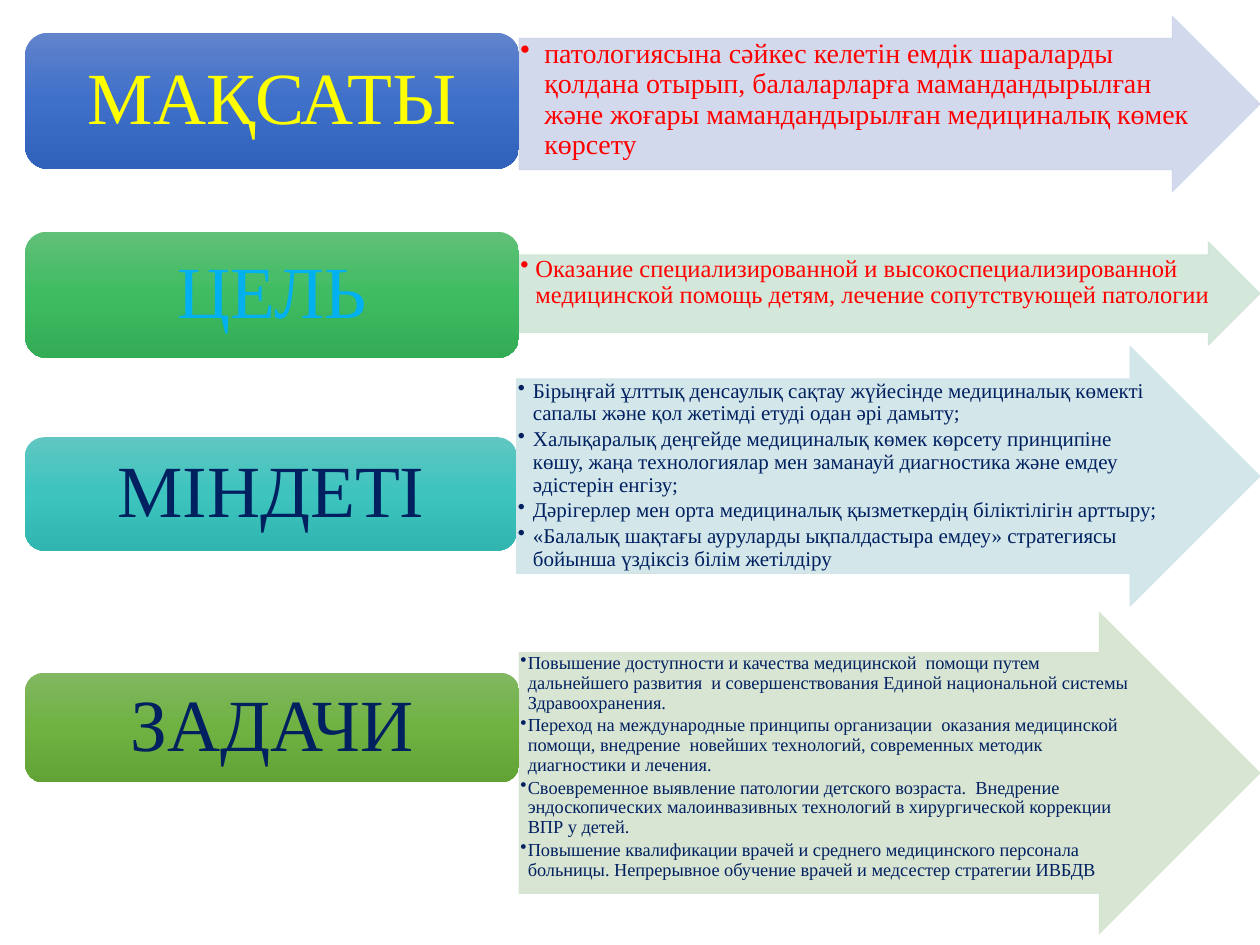
from lxml.etree import SubElement
from pptx import Presentation
from pptx.dml.color import RGBColor
from pptx.enum.shapes import MSO_SHAPE as Shape
from pptx.enum.text import MSO_ANCHOR as Anchor, PP_ALIGN as Align
from pptx.oxml.ns import qn
from pptx.util import Inches, Pt

FONT = "Times New Roman"
RED = RGBColor(0xFF, 0x00, 0x00)
YELLOW = RGBColor(0xFF, 0xFF, 0x00)
SKY = RGBColor(0x00, 0xB0, 0xF0)
NAVY = RGBColor(0x00, 0x20, 0x60)

SLIDE_WIDTH, SLIDE_HEIGHT = 10, 7.5
LABEL_LEFT = 0.2
LABEL_SIZE = 42

ROWS = [
    dict(
        label="МАҚСАТЫ", label_color=YELLOW, label_top=0.26, label_height=1.08,
        gradient=("6183CB", "3E70CA", "3062BB"),
        arrow_left=4.12, arrow_top=0.13, arrow_height=1.39, tint=RGBColor(0xCF, 0xD5, 0xEA),
        size=16, indent=0.19, color=RED,
        points=["патологиясына сәйкес келетін емдік шараларды қолдана отырып, балаларларға "
                "мамандандырылған және жоғары мамандандырылған медициналық көмек көрсету"],
    ),
    dict(
        label="ЦЕЛЬ", label_color=SKY, label_top=1.84, label_height=1.0,
        gradient=("60C077", "3FBC62", "33AC55"),
        arrow_left=4.12, arrow_top=1.92, arrow_height=0.82, tint=RGBColor(0xCF, 0xE5, 0xD8),
        size=14, indent=0.12, color=RED,
        points=["Оказание специализированной и высокоспециализированной медицинской помощь "
                "детям, лечение сопутствующей патологии"],
    ),
    dict(
        label="МІНДЕТІ", label_color=NAVY, label_top=3.47, label_height=0.9,
        gradient=("60C6C1", "3DC4BF", "30B5B0"),
        arrow_left=4.1, arrow_top=2.75, arrow_height=2.06, tint=RGBColor(0xCF, 0xE5, 0xE8),
        size=12, indent=0.12, color=NAVY,
        points=[
            "Бірыңғай ұлттық денсаулық сақтау жүйесінде медициналық көмекті сапалы және қол "
            "жетімді етуді одан әрі дамыту;",
            "Халықаралық деңгейде медициналық көмек көрсету принципіне көшу, жаңа технологиялар "
            "мен заманауй диагностика және емдеу әдістерін енгізу;",
            "Дәрігерлер мен орта медициналық қызметкердің біліктілігін арттыру;",
            "«Балалық шақтағы ауруларды ықпалдастыра емдеу» стратегиясы бойынша үздіксіз білім "
            "жетілдіру",
        ],
    ),
    dict(
        label="ЗАДАЧИ", label_color=NAVY, label_top=5.34, label_height=0.87,
        gradient=("81B861", "6FB242", "62A336"),
        arrow_left=4.12, arrow_top=4.86, arrow_height=2.55, tint=RGBColor(0xD5, 0xE3, 0xCF),
        size=10.5, indent=0.06, color=NAVY,
        points=[
            "Повышение доступности и качества медицинской  помощи путем дальнейшего развития  и "
            "совершенствования Единой национальной системы Здравоохранения.",
            "Переход на международные принципы организации  оказания медицинской помощи, "
            "внедрение  новейших технологий, современных методик диагностики и лечения.",
            "Своевременное выявление патологии детского возраста.  Внедрение эндоскопических "
            "малоинвазивных технологий в хирургической коррекции ВПР у детей.",
            "Повышение квалификации врачей и среднего медицинского персонала больницы. "
            "Непрерывное обучение врачей и медсестер стратегии ИВБДВ",
        ],
    ),
]


def add_shape(page, kind, area):
    shape = page.shapes.add_shape(kind, *map(Inches, area))
    shape.shadow.inherit = False
    return shape


def add_arrow(page, area, tint):
    arrow = add_shape(page, Shape.RIGHT_ARROW, area)
    arrow.adjustments[0] = 0.75
    arrow.adjustments[1] = 0.5
    arrow.fill.solid()
    arrow.fill.fore_color.rgb = tint
    arrow.line.color.rgb = tint
    arrow.line.width = Pt(0.5)
    for color in arrow._element.spPr.iter(qn("a:srgbClr")):
        SubElement(color, qn("a:alpha"), val="90000")


def add_label_back(page, area, gradient):
    back = add_shape(page, Shape.ROUNDED_RECTANGLE, area)
    back.line.fill.background()
    back.fill.gradient()
    back.fill.gradient_angle = 270
    stops = back._element.spPr.find(qn("a:gradFill")).find(qn("a:gsLst"))
    for stop in list(stops):
        stops.remove(stop)
    for position, color in zip((0, 50000, 100000), gradient):
        stop = SubElement(stops, qn("a:gs"), pos=str(position))
        SubElement(stop, qn("a:srgbClr"), val=color)


def add_text(page, area, lines, size, color, margins, anchor=Anchor.TOP, align=Align.LEFT):
    box = page.shapes.add_textbox(*map(Inches, area))
    frame = box.text_frame
    frame.word_wrap = True
    frame.vertical_anchor = anchor
    frame.margin_left = frame.margin_right = Inches(margins[0])
    frame.margin_top = frame.margin_bottom = Inches(margins[1])
    frame.text = "\n".join(lines)
    for para in frame.paragraphs:
        para.alignment = align
        para.line_spacing = 0.9
        for span in para.runs:
            span.font.name = FONT
            span.font.size = Pt(size)
            span.font.color.rgb = color
    return frame


def add_bullets(frame, indent, size):
    for para in frame.paragraphs:
        para.space_after = Pt(0.15 * size)
        properties = para._p.get_or_add_pPr()
        properties.set("marL", str(Inches(indent)))
        properties.set("indent", str(-Inches(indent)))
        SubElement(properties, qn("a:buChar"), char="•")


def add_row(page, row):
    left, top, height = row["arrow_left"], row["arrow_top"], row["arrow_height"]
    width = SLIDE_WIDTH - left
    add_arrow(page, (left, top, width, height), row["tint"])
    text_area = (left, top + height / 8, width - height * 3 / 8, height * 3 / 4)
    frame = add_text(page, text_area, row["points"], row["size"], row["color"], (0.01, 0.01))
    add_bullets(frame, row["indent"], row["size"])

    label_top, label_height = row["label_top"], row["label_height"]
    label_width = left - LABEL_LEFT
    add_label_back(page, (LABEL_LEFT, label_top, label_width, label_height), row["gradient"])
    inset = 0.05 * label_height
    label_area = (LABEL_LEFT + inset, label_top + inset,
                  label_width - 2 * inset, label_height - 2 * inset)
    add_text(page, label_area, [row["label"]], LABEL_SIZE, row["label_color"],
             (0.17, 0.09), Anchor.MIDDLE, Align.CENTER)


def main():
    deck = Presentation()
    deck.slide_width = Inches(SLIDE_WIDTH)
    deck.slide_height = Inches(SLIDE_HEIGHT)
    page = deck.slides.add_slide(deck.slide_layouts[6])
    for row in ROWS:
        add_row(page, row)
    deck.save("out.pptx")


if __name__ == "__main__":
    main()
